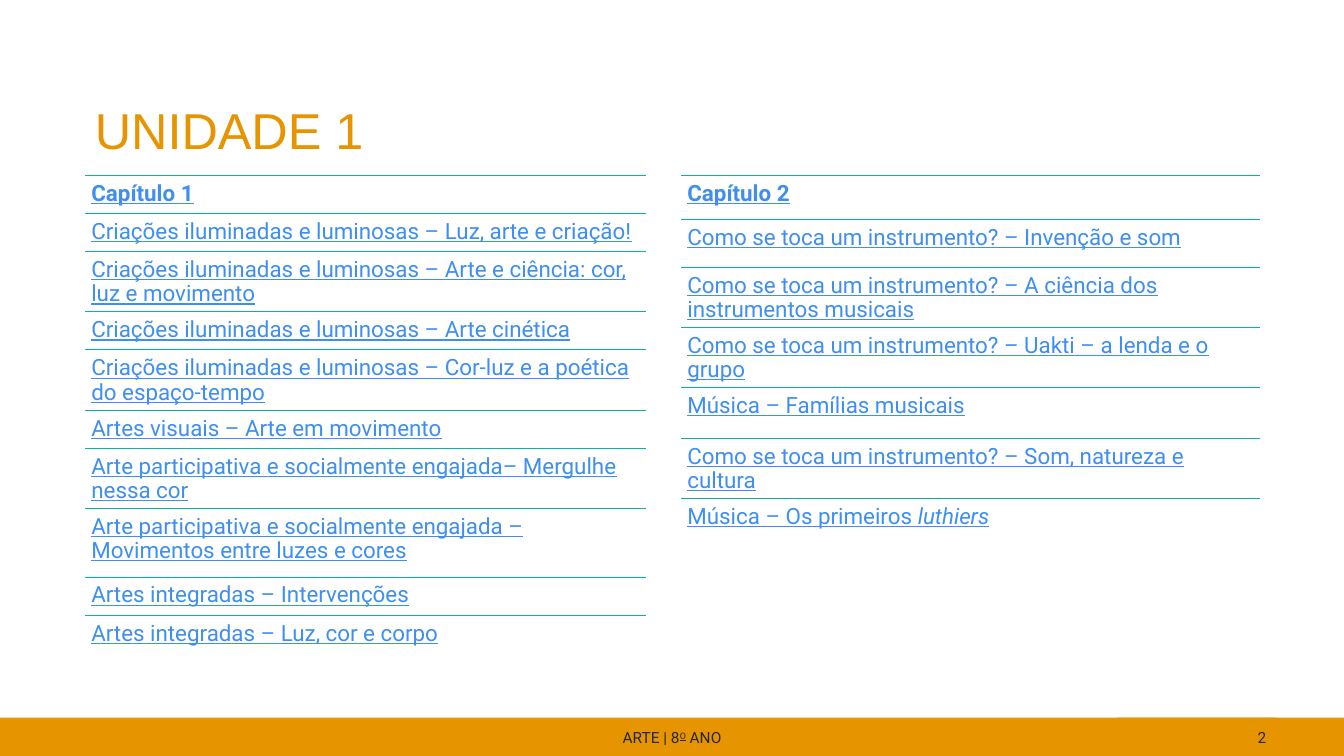
from pptx import Presentation
from pptx.dml.color import RGBColor
from pptx.enum import shapes, text
from pptx.oxml.ns import qn
from pptx.util import Pt
from lxml import etree

ORANGE, TEAL, BLUE, DARK = "E69500", "09B69D", "3E8FF1", "262626"
ONE_LINE, TWO_LINES = 27.2, 43

CHAPTER_1 = [
    ("Capítulo 1", ONE_LINE),
    ("Criações iluminadas e luminosas – Luz, arte e criação!", ONE_LINE),
    ("Criações iluminadas e luminosas – Arte e ciência: cor, luz e movimento", TWO_LINES),
    ("Criações iluminadas e luminosas – Arte cinética", ONE_LINE),
    ("Criações iluminadas e luminosas – Cor-luz e a poética do espaço-tempo", TWO_LINES),
    ("Artes visuais – Arte em movimento", ONE_LINE),
    ("Arte participativa e socialmente engajada– Mergulhe nessa cor", TWO_LINES),
    ("Arte participativa e socialmente engajada – Movimentos entre luzes e cores", 49),
    ("Artes integradas – Intervenções", ONE_LINE),
    ("Artes integradas – Luz, cor e corpo", ONE_LINE),
]
CHAPTER_2 = [
    ("Capítulo 2", 31.4),
    ("Como se toca um instrumento? – Invenção e som", 34.2),
    ("Como se toca um instrumento? – A ciência dos instrumentos musicais", TWO_LINES),
    ("Como se toca um instrumento? – Uakti – a lenda e o grupo", TWO_LINES),
    ("Música – Famílias musicais", 36),
    ("Como se toca um instrumento? – Som, natureza e cultura", TWO_LINES),
    ("Música – Os primeiros |luthiers", TWO_LINES),
]


def rgb(value):
    return RGBColor.from_string(value)


def add_run(paragraph, words, color, **formats):
    run = paragraph.add_run()
    run.text = words
    run.font.color.rgb = rgb(color)
    for name, value in formats.items():
        setattr(run.font, name, value)
    return run


def add_rule(group, left, top, width):
    rule = group.shapes.add_connector(
        shapes.MSO_CONNECTOR.STRAIGHT, Pt(left), Pt(top), Pt(left + width), Pt(top))
    rule.line.color.rgb = rgb(TEAL)
    rule.line.width = Pt(0.5)
    etree.SubElement(rule._element.spPr, qn("a:effectLst"))


def add_entry(group, left, top, width, height, words, bold):
    """Add one contents line; words after a bar are italic."""
    entry = group.shapes.add_textbox(Pt(left), Pt(top), Pt(width), Pt(height))
    frame = entry.text_frame
    frame.word_wrap = True
    for side in ("left", "top", "right", "bottom"):
        setattr(frame, f"margin_{side}", Pt(4.8))
    paragraph = frame.paragraphs[0]
    paragraph.line_spacing = 0.9
    for index, part in enumerate(words.split("|")):
        add_run(paragraph, part, BLUE, name="Roboto", size=Pt(16),
                bold=bold, italic=index == 1, underline=True)


def add_chapter(slide, left, width, entries):
    group = slide.shapes.add_group_shape()
    top = 125.3
    for index, (words, height) in enumerate(entries):
        add_rule(group, left, top, width)
        add_entry(group, left, top, width, height, words, bold=index == 0)
        top += height


def add_bar(slide, left, width, align):
    """Add a footer bar and return its paragraph."""
    bar = slide.shapes.add_shape(
        shapes.MSO_SHAPE.RECTANGLE, Pt(left), Pt(512.6), Pt(width), Pt(28.8))
    bar.shadow.inherit = False
    bar.fill.solid()
    bar.fill.fore_color.rgb = rgb(ORANGE)
    bar.line.fill.background()
    bar.text_frame.vertical_anchor = text.MSO_ANCHOR.MIDDLE
    paragraph = bar.text_frame.paragraphs[0]
    paragraph.alignment = align
    return paragraph


def add_footer(slide):
    small = {"name": "Roboto", "size": Pt(11)}
    course = add_bar(slide, 0, 960, text.PP_ALIGN.CENTER)
    add_run(course, "ARTE | 8", DARK, **small)
    ordinal = add_run(course, "O", DARK, underline=True, **small)
    ordinal.font._element.set("baseline", "30000")
    add_run(course, " ANO", DARK, **small)
    page = add_bar(slide, 798, 113.6, text.PP_ALIGN.RIGHT)
    add_run(page, "2", DARK, **small)


def set_title(slide, words):
    title = slide.shapes.title
    place = {"left": 60.5, "top": 0, "width": 578, "height": 117.4}
    for name, value in place.items():
        setattr(title, name, Pt(value))
    frame = title.text_frame
    frame.auto_size = text.MSO_AUTO_SIZE.NONE
    frame.vertical_anchor = text.MSO_ANCHOR.BOTTOM
    paragraph = frame.paragraphs[0]
    paragraph.alignment = text.PP_ALIGN.LEFT
    add_run(paragraph, words, ORANGE, name="Arial", size=Pt(36))


def main():
    deck = Presentation()
    deck.slide_width, deck.slide_height = Pt(960), Pt(540)
    slide = deck.slides.add_slide(deck.slide_layouts[5])
    add_footer(slide)
    set_title(slide, "UNIDADE 1")
    add_chapter(slide, 60.5, 401, CHAPTER_1)
    add_chapter(slide, 486.2, 413.6, CHAPTER_2)
    deck.save("out.pptx")


if __name__ == "__main__":
    main()
